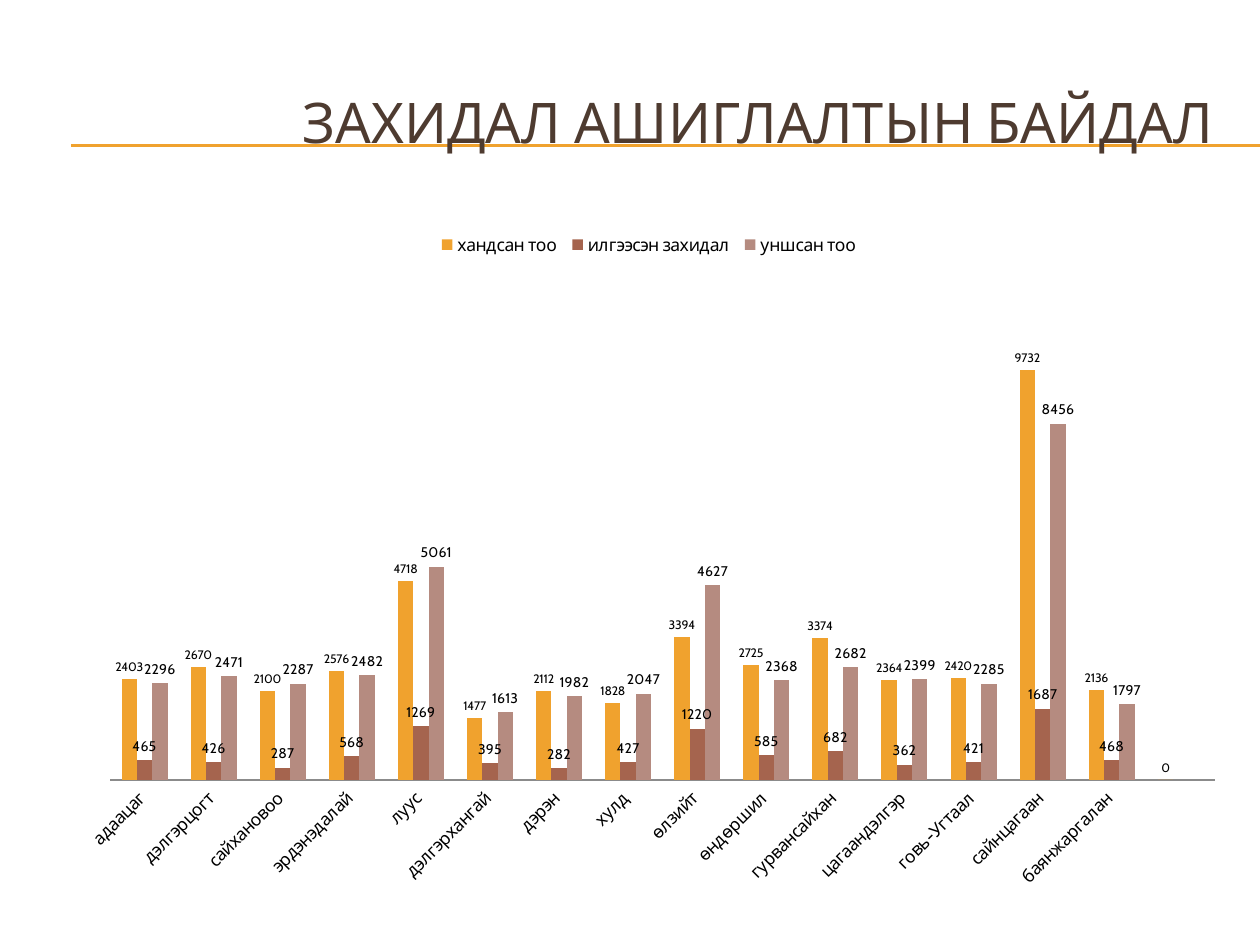
from dataclasses import dataclass
from typing import Optional

from lxml import etree
from pptx import Presentation
from pptx.chart.data import CategoryChartData
from pptx.dml.color import RGBColor
from pptx.enum import chart as charts, shapes, text
from pptx.oxml import parse_xml
from pptx.oxml.ns import nsdecls, qn
from pptx.util import Emu, Pt

PX_PER_INCH = 126
FONT = "Cabin"
BROWN = RGBColor(0x4E, 0x3B, 0x30)
ORANGE = RGBColor(0xF0, 0xA2, 0x2E)
RUST = RGBColor(0xA5, 0x64, 0x4E)
ROSE = RGBColor(0xB5, 0x8B, 0x80)
BLACK = RGBColor(0, 0, 0)
GRAY = RGBColor(0x8B, 0x8B, 0x8B)


@dataclass
class Series:
    name: str
    color: RGBColor
    label_size: int
    values: list[Optional[int]]


DISTRICTS = [
    "адаацаг ", "дэлгэрцогт ", "сайхановоо ", "эрдэнэдалай ", "луус ",
    "дэлгэрхангай ", "дэрэн ", "хулд ", "өлзийт ", "өндөршил ",
    "гурвансайхан ", "цагаандэлгэр ", "говь-Угтаал ", "сайнцагаан ",
    "баянжаргалан ", "",
]
SERIES = [
    Series("хандсан тоо ", ORANGE, 7,
           [2403, 2670, 2100, 2576, 4718, 1477, 2112, 1828,
            3394, 2725, 3374, 2364, 2420, 9732, 2136, 0]),
    Series("илгээсэн захидал ", RUST, 8,
           [465, 426, 287, 568, 1269, 395, 282, 427,
            1220, 585, 682, 362, 421, 1687, 468, None]),
    Series("уншсан тоо ", ROSE, 8,
           [2296, 2471, 2287, 2482, 5061, 1613, 1982, 2047,
            4627, 2368, 2682, 2399, 2285, 8456, 1797, None]),
]


def px(length: int) -> Emu:
    return Emu(round(length * 914400 / PX_PER_INCH))


def style_font(font, size: int, color: RGBColor) -> None:
    font.name = FONT
    font.size = Pt(size)
    font.bold = False
    font.color.rgb = color


def add_rule(page, y: int) -> None:
    rule = page.shapes.add_connector(
        shapes.MSO_CONNECTOR.STRAIGHT, px(71), px(y), px(1260), px(y))
    rule.line.color.rgb = ORANGE
    rule.line.width = Pt(0.75)
    etree.SubElement(rule._element.spPr, qn("a:effectLst"))


def add_title(page, wording: str) -> None:
    box = page.shapes.add_textbox(px(42), px(63), px(1197), px(116))
    frame = box.text_frame
    frame.word_wrap = True
    frame.vertical_anchor = text.MSO_ANCHOR.MIDDLE
    para = frame.paragraphs[0]
    para.alignment = text.PP_ALIGN.RIGHT
    span = para.add_run()
    span.text = wording
    style_font(span.font, 32, BROWN)


def style_series(plot_series, series: Series) -> None:
    plot_series.invert_if_negative = False
    plot_series.format.fill.solid()
    plot_series.format.fill.fore_color.rgb = series.color
    labels = plot_series.data_labels
    labels.show_value = True
    labels.position = charts.XL_LABEL_POSITION.OUTSIDE_END
    style_font(labels.font, series.label_size, BLACK)


def set_plot_layout(chart, x: float, y: float, w: float, h: float) -> None:
    area = chart._chartSpace.chart.plotArea
    for old in area.findall(qn("c:layout")):
        area.remove(old)
    area.insert(0, parse_xml(
        f'<c:layout {nsdecls("c")}><c:manualLayout>'
        '<c:layoutTarget val="inner"/><c:xMode val="edge"/><c:yMode val="edge"/>'
        f'<c:x val="{x}"/><c:y val="{y}"/><c:w val="{w}"/><c:h val="{h}"/>'
        '</c:manualLayout></c:layout>'))


def add_usage_chart(page) -> None:
    data = CategoryChartData()
    data.categories = DISTRICTS
    for series in SERIES:
        data.add_series(series.name, series.values)
    chart = page.shapes.add_chart(
        charts.XL_CHART_TYPE.COLUMN_CLUSTERED,
        px(63), px(220), px(1176), px(683), data).chart
    style_font(chart.font, 10, BLACK)
    chart.has_title = False

    # Legend
    chart.has_legend = True
    chart.legend.position = charts.XL_LEGEND_POSITION.TOP
    chart.legend.include_in_layout = False
    style_font(chart.legend.font, 10, BLACK)

    # Axes
    districts = chart.category_axis
    districts.major_tick_mark = charts.XL_TICK_MARK.NONE
    districts.format.line.color.rgb = GRAY
    style_font(districts.tick_labels.font, 10, BLACK)
    body = districts._element.find(qn("c:txPr")).find(qn("a:bodyPr"))
    body.set("rot", "-2700000")
    counts = chart.value_axis
    counts.visible = False
    counts.has_major_gridlines = False
    counts.minimum_scale = 0
    counts.maximum_scale = 12000

    # Columns
    plot = chart.plots[0]
    plot.gap_width = 150
    plot.overlap = 0
    plot.vary_by_categories = False
    for plot_series, series in zip(plot.series, SERIES):
        style_series(plot_series, series)
    set_plot_layout(chart, 0.04, 0.08, 0.94, 0.74)


def main() -> None:
    deck = Presentation()
    deck.slide_width, deck.slide_height = px(1260), px(945)
    page = deck.slides.add_slide(deck.slide_layouts[6])
    for y in (145, 146):
        add_rule(page, y)
    add_title(page, "ЗАХИДАЛ АШИГЛАЛТЫН БАЙДАЛ ")
    add_usage_chart(page)
    deck.save("out.pptx")


if __name__ == "__main__":
    main()
